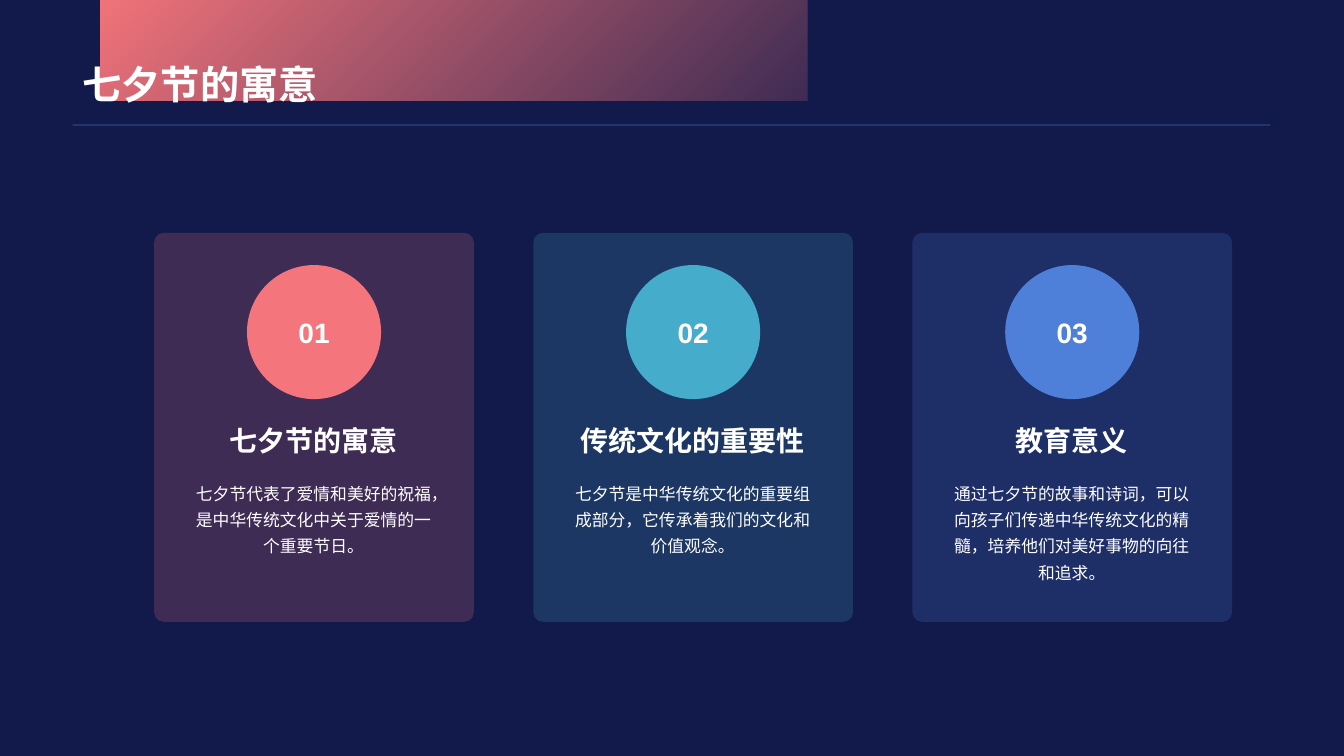
import pptx
import pptx.dml.color
import pptx.enum.shapes
import pptx.enum.text
import pptx.oxml.ns
import pptx.oxml.xmlchemy
import pptx.util

COLORS = {
    "night": "121A4B",
    "white": "FFFFFF",
    "coral": "F4757B",
    "teal": "45ACCC",
    "blue": "4E80D9",
}
SHAPE = pptx.enum.shapes.MSO_SHAPE
ALIGN = pptx.enum.text.PP_ALIGN
ANCHOR = pptx.enum.text.MSO_ANCHOR
Inches = pptx.util.Inches
qn = pptx.oxml.ns.qn
new_element = pptx.oxml.xmlchemy.OxmlElement

CARDS = [
    ("coral", "七夕节的寓意",
     "七夕节代表了爱情和美好的祝福，是中华传统文化中关于爱情的一个重要节日。"),
    ("teal", "传统文化的重要性",
     "七夕节是中华传统文化的重要组成部分，它传承着我们的文化和价值观念。"),
    ("blue", "教育意义",
     "通过七夕节的故事和诗词，可以向孩子们传递中华传统文化的精髓，培养他们对美好事物的向往和追求。"),
]
CARD_LEFT, CARD_STEP = 1.53, 3.76

# Title banner outline: start point, then cubic curves (two controls, end)
BANNER_START = (8.05, 0.67)
BANNER_CURVES = [
    ((7.86, 0.46), (7.71, 0.42), (7.56, 0.42)),
    ((7.26, 0.42), (0.94, 0.42), (0.94, 0.42)),
    ((0.82, 0.42), (0.72, 0.52), (0.72, 0.65)),
    ((0.72, 1.14), (0.72, 1.14), (0.72, 1.14)),
    ((8.63, 1.14), (8.63, 1.14), (8.63, 1.14)),
    ((8.38, 1.07), (8.23, 0.89), BANNER_START),
]


def rgb(name):
    return pptx.dml.color.RGBColor.from_string(COLORS[name])


def set_alpha(element, percent):
    """Make the first colour inside an XML element translucent."""
    alpha = new_element("a:alpha")
    alpha.set("val", str(percent * 1000))
    next(element.iter(qn("a:srgbClr"))).append(alpha)


def curve_points(start, curves, steps=16):
    """Sample a chain of cubic curves."""
    points = []
    for c1, c2, end in curves:
        for i in range(1, steps + 1):
            t = i / steps
            u = 1 - t
            points.append(tuple(
                u**3 * a + 3 * u * u * t * b + 3 * u * t * t * c + t**3 * d
                for a, b, c, d in zip(start, c1, c2, end)))
        start = end
    return points


class Deck:
    def __init__(self, font="Arial"):
        self.font = font
        self.prs = pptx.Presentation()
        self.prs.slide_width = Inches(13.33)
        self.prs.slide_height = Inches(7.5)

    def add_slide(self):
        self.s = self.prs.slides.add_slide(self.prs.slide_layouts[5])
        self.s.background.fill.solid()
        self.s.background.fill.fore_color.rgb = rgb("night")

    def set_text(self, sp, text, size, bold=False, align=ALIGN.CENTER,
                 anchor=ANCHOR.TOP, spacing=None):
        tf = sp.text_frame
        tf.word_wrap = True
        tf.auto_size = pptx.enum.text.MSO_AUTO_SIZE.NONE
        tf.vertical_anchor = anchor
        p = tf.paragraphs[0]
        p.text = text
        p.alignment = align
        p.line_spacing = spacing
        p.font.name = self.font
        p.font.size = pptx.util.Pt(size)
        p.font.bold = bold
        p.font.color.rgb = rgb("white")

    def title(self, text, x, y, w, h):
        sp = self.s.shapes.title
        sp.left, sp.top, sp.width, sp.height = map(Inches, (x, y, w, h))
        self.set_text(sp, text, 28, True, ALIGN.LEFT, ANCHOR.BOTTOM)
        self.s.shapes._spTree.append(sp._element)  # bring to front

    def text(self, text, x, y, w, h, size, **style):
        sp = self.s.shapes.add_textbox(*map(Inches, (x, y, w, h)))
        self.set_text(sp, text, size, **style)

    def shape(self, kind, x, y, w, h, color, alpha=None):
        sp = self.s.shapes.add_shape(kind, *map(Inches, (x, y, w, h)))
        sp.shadow.inherit = False
        sp.fill.solid()
        sp.fill.fore_color.rgb = rgb(color)
        sp.line.fill.background()
        if alpha is not None:
            set_alpha(sp._element.spPr, alpha)
        return sp

    def banner(self, start, curves, color):
        builder = self.s.shapes.build_freeform(*start, scale=Inches(1))
        builder.add_line_segments(curve_points(start, curves), close=True)
        sp = builder.convert_to_shape()
        sp.shadow.inherit = False
        sp.line.fill.background()
        sp.fill.gradient()
        sp.fill.gradient_angle = 315
        for stop in sp.fill.gradient_stops:
            stop.color.rgb = rgb(color)
        set_alpha(list(sp._element.iter(qn("a:gs")))[-1], 10)

    def rule(self, x1, x2, y, color, alpha):
        line = self.s.shapes.add_connector(
            pptx.enum.shapes.MSO_CONNECTOR.STRAIGHT,
            *map(Inches, (x1, y, x2, y)))
        line.line.width = pptx.util.Pt(1)
        line.line.color.rgb = rgb(color)
        spPr = line._element.spPr
        set_alpha(spPr, alpha)
        spPr.append(new_element("a:effectLst"))

    def card(self, x, number, color, heading, body):
        panel = self.shape(SHAPE.ROUNDED_RECTANGLE, x, 2.31, 3.17, 3.86, color, 20)
        panel.adjustments[0] = 0.03
        badge = self.shape(SHAPE.OVAL, x + 0.92, 2.63, 1.33, 1.33, color)
        self.set_text(badge, f"{number:02d}", 20, True, anchor=ANCHOR.MIDDLE)
        self.text(heading, x + 0.29, 4.15, 2.58, 0.44, 20, bold=True)
        self.text(body, x + 0.29, 4.69, 2.58, 1.13, 12, spacing=1.3)


def main():
    deck = Deck()
    deck.add_slide()

    # Header
    deck.banner(BANNER_START, BANNER_CURVES, "coral")
    deck.rule(0.72, 12.6, 1.24, "blue", 40)
    deck.title("七夕节的寓意", 0.72, 0, 11.88, 1.12)

    # Three numbered cards
    for i, (color, heading, body) in enumerate(CARDS):
        deck.card(CARD_LEFT + i * CARD_STEP, i + 1, color, heading, body)

    deck.prs.save("out.pptx")


if __name__ == "__main__":
    main()
